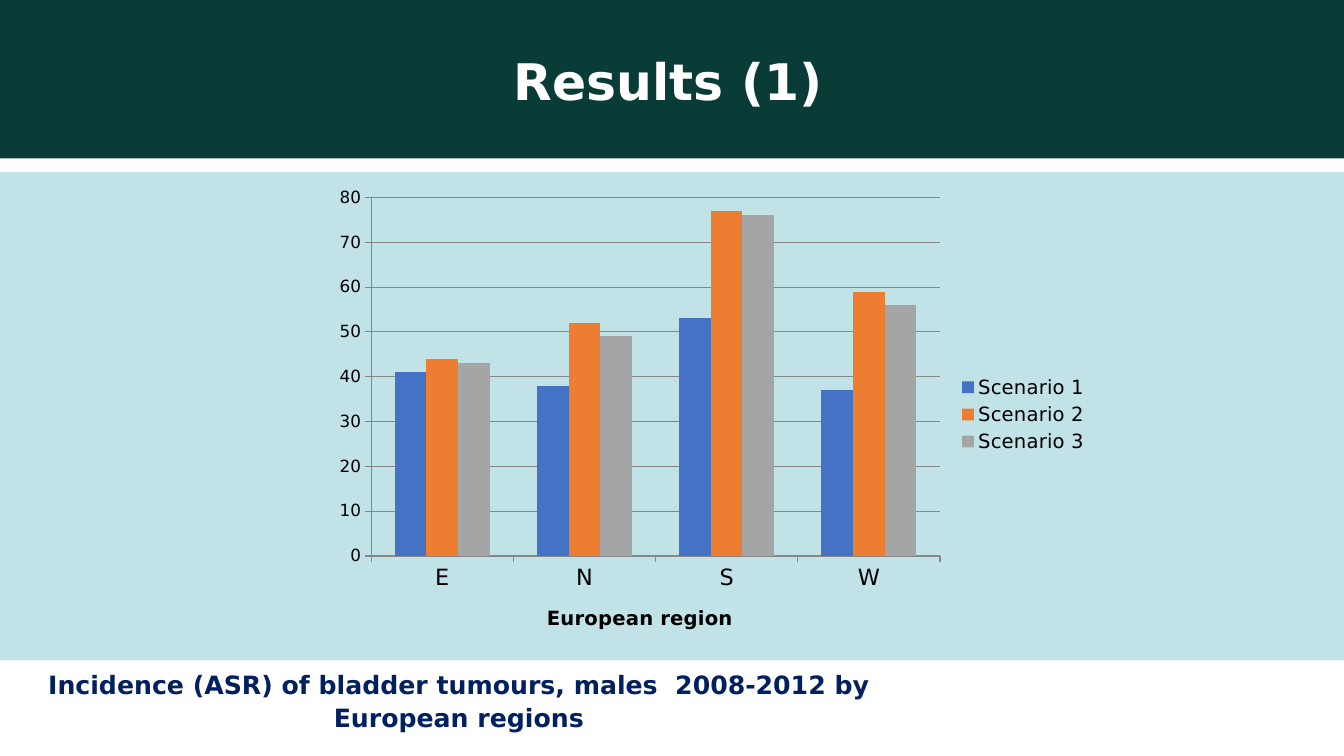
from lxml import etree
from pptx import Presentation
from pptx.chart.data import CategoryChartData
from pptx.dml.color import RGBColor
from pptx.enum.chart import XL_CHART_TYPE, XL_LEGEND_POSITION, XL_TICK_MARK
from pptx.enum.shapes import MSO_SHAPE
from pptx.enum.text import MSO_ANCHOR, PP_ALIGN
from pptx.oxml import parse_xml
from pptx.oxml.ns import nsdecls, qn
from pptx.util import Cm, Pt

COLORS = {
    "header": "093B37",
    "panel": "C1E3E8",
    "title": "FFFFFF",
    "caption": "002060",
    "text": "000000",
    "axis": "878787",
}
FONT = "DejaVu Sans"
SCENARIOS = [
    ("Scenario 1", (41, 38, 53, 37), "4472C4"),
    ("Scenario 2", (44, 52, 77, 59), "ED7D31"),
    ("Scenario 3", (43, 49, 76, 56), "A5A5A5"),
]


def style_font(font, size, color, bold=False):
    font.name = FONT
    font.size = Pt(size)
    font.bold = bold
    font.color.rgb = RGBColor.from_string(COLORS[color])


def write_text(frame, text, size, color, spacing):
    frame.text = text
    frame.word_wrap = True
    paragraph = frame.paragraphs[0]
    paragraph.alignment = PP_ALIGN.CENTER
    paragraph.line_spacing = spacing
    style_font(paragraph.runs[0].font, size, color, True)


presentation = Presentation()
presentation.slide_width = Cm(33.87)
presentation.slide_height = Cm(19.05)
slide = presentation.slides.add_slide(presentation.slide_layouts[5])

for color, top, height in (("panel", 4.34, 12.3), ("header", 0, 3.99)):
    band = slide.shapes.add_shape(
        MSO_SHAPE.RECTANGLE, 0, Cm(top), presentation.slide_width, Cm(height))
    band.shadow.inherit = False
    band.fill.solid()
    band.fill.fore_color.rgb = RGBColor.from_string(COLORS[color])
    band.line.fill.background()

title = slide.shapes.title
title.left, title.top, title.width, title.height = Cm(0.81), Cm(0.74), Cm(32.05), Cm(2.77)
title.text_frame.vertical_anchor = MSO_ANCHOR.MIDDLE
write_text(title.text_frame, "Results (1)", 36, "title", 0.9)
slide.shapes._spTree.append(title._element)

caption = slide.shapes.add_textbox(Cm(0.48), Cm(16.66), Cm(22.17), Cm(1.96))
write_text(caption.text_frame,
           "Incidence (ASR) of bladder tumours, males  2008-2012 by European regions",
           18, "caption", 1.1)

incidence = CategoryChartData()
incidence.categories = ["E", "N", "S", "W"]
for name, rates, color in SCENARIOS:
    incidence.add_series(name, rates)
chart = slide.shapes.add_chart(
    XL_CHART_TYPE.COLUMN_CLUSTERED, Cm(8.18), Cm(4.5), Cm(19.51), Cm(11.89), incidence).chart
chart.has_title = False
style_font(chart.font, 10, "text")
chart.font.name = "Times New Roman"

plot = chart.plots[0]
plot.vary_by_categories = False
plot.gap_width = 150
plot.overlap = 0
for series, (name, rates, color) in zip(plot.series, SCENARIOS):
    series.format.fill.solid()
    series.format.fill.fore_color.rgb = RGBColor.from_string(color)

regions, rate_scale = chart.category_axis, chart.value_axis
rate_scale.minimum_scale = 0
rate_scale.maximum_scale = 80
rate_scale.major_unit = 10
rate_scale.has_major_gridlines = True
for axis, size in ((regions, 16), (rate_scale, 12)):
    axis.major_tick_mark = XL_TICK_MARK.OUTSIDE
    style_font(axis.tick_labels.font, size, "text")
for line in (regions.format.line, rate_scale.format.line, rate_scale.major_gridlines.format.line):
    line.width = Pt(0.75)
    line.color.rgb = RGBColor.from_string(COLORS["axis"])

regions.has_title = True
region_title = regions.axis_title.text_frame
region_title.text = "European region"
style_font(region_title.paragraphs[0].runs[0].font, 14, "text", True)

chart.has_legend = True
chart.legend.position = XL_LEGEND_POSITION.RIGHT
chart.legend.include_in_layout = False
style_font(chart.legend.font, 14, "text")

chart_part = chart._chartSpace.find(qn("c:chart"))
chart_part.addnext(parse_xml(
    f'<c:spPr {nsdecls("c", "a")}><a:noFill/><a:ln><a:noFill/></a:ln></c:spPr>'))
plot_area = chart_part.find(qn("c:plotArea"))
for old_layout in plot_area.findall(qn("c:layout")):
    plot_area.remove(old_layout)
layout = etree.Element(qn("c:layout"))
plot_area.insert(0, layout)
manual = etree.SubElement(layout, qn("c:manualLayout"))
for tag, value in (("layoutTarget", "inner"), ("xMode", "edge"), ("yMode", "edge"),
                   ("x", 0.06), ("y", 0.04), ("w", 0.735), ("h", 0.76)):
    etree.SubElement(manual, qn(f"c:{tag}")).set("val", str(value))

presentation.save("out.pptx")
